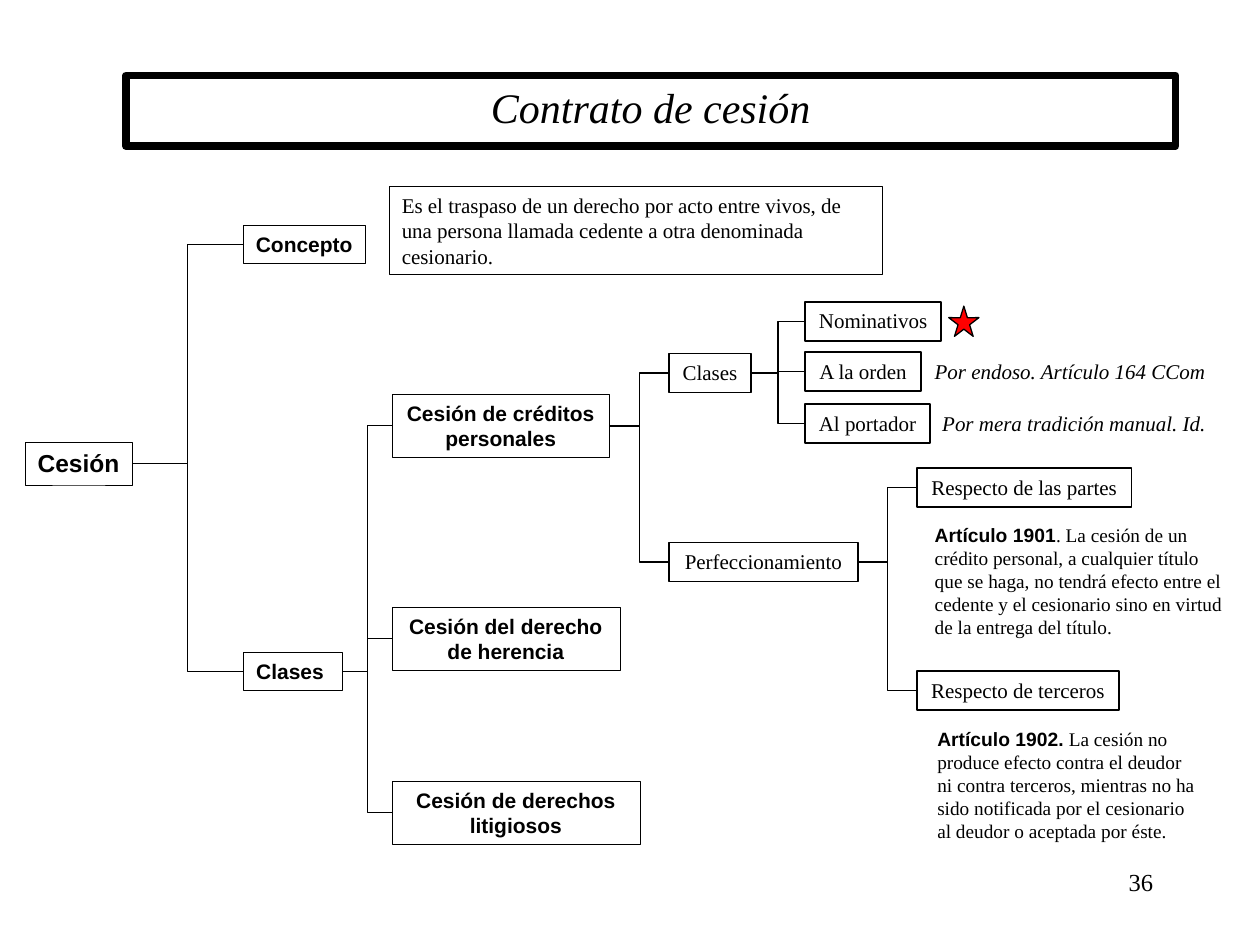
from lxml import etree
from pptx import Presentation
from pptx.dml.color import RGBColor
from pptx.enum.shapes import MSO_CONNECTOR, MSO_SHAPE
from pptx.enum.text import MSO_ANCHOR, MSO_AUTO_SIZE, PP_ALIGN
from pptx.oxml.ns import qn
from pptx.util import Inches, Pt

ELBOW = MSO_CONNECTOR.ELBOW
RECT, STAR = MSO_SHAPE.RECTANGLE, MSO_SHAPE.STAR_5_POINT
LEFT, CENTER, RIGHT = PP_ALIGN.LEFT, PP_ALIGN.CENTER, PP_ALIGN.RIGHT
TOP, MIDDLE = MSO_ANCHOR.TOP, MSO_ANCHOR.MIDDLE
FIT = MSO_AUTO_SIZE.SHAPE_TO_FIT_TEXT
SERIF, SANS = "Times New Roman", "Arial"
BLACK, RED = "000000", "FF0000"
LEFT_SITE, RIGHT_SITE = 1, 3

# Content: left edge of each tree level, in inches
COLUMNS = [0.2, 1.93, 3.11, 5.31, 6.39, 7.28]
TITLE = "Contrato de cesión"
DEFINITION = ("Es el traspaso de un derecho por acto entre vivos, de una persona "
              "llamada cedente a otra denominada cesionario.")

# Box styles
HEADING = dict(font=SANS, bold=True, align=CENTER)
ROOT = dict(font=SANS, bold=True, size=14)
LEAF = dict(align=CENTER)

# key: (text, parent, column, middle y, width, height, wrap, line width, style)
TREE = {
    "root": ("Cesión", None, 0, 3.68, 0.85, 0.34, False, 0.25, ROOT),
    "concept": ("Concepto", "root", 1, 1.94, 0.97, 0.3, False, 0.25, HEADING),
    "kinds": ("Clases ", "root", 1, 5.33, 0.79, 0.3, False, 0.25, HEADING),
    "credits": ("Cesión de créditos personales", "kinds", 2, 3.38, 1.73, 0.5, True, 0.25, HEADING),
    "inheritance": ("Cesión del derecho de herencia", "kinds", 2, 5.07, 1.81, 0.5, True, 0.25, HEADING),
    "litigation": ("Cesión de derechos litigiosos", "kinds", 2, 6.45, 1.97, 0.5, True, 0.25, HEADING),
    "credit kinds": ("Clases", "credits", 3, 2.96, 0.65, 0.31, False, 1, LEAF),
    "perfection": ("Perfeccionamiento", "credits", 3, 4.46, 1.5, 0.31, True, 1, LEAF),
    "registered": ("Nominativos", "credit kinds", 4, 2.55, 1.08, 0.31, False, 1, LEAF),
    "order": ("A la orden", "credit kinds", 4, 2.95, 0.92, 0.31, False, 1, LEAF),
    "bearer": ("Al portador", "credit kinds", 4, 3.36, 0.99, 0.31, False, 1, LEAF),
    "parties": ("Respecto de las partes", "perfection", 5, 3.87, 1.7, 0.31, False, 1, LEAF),
    "third parties": ("Respecto de terceros", "perfection", 5, 5.48, 1.6, 0.31, False, 1, LEAF),
}

# (text, position)
REMARKS = [
    ("Por endoso. Artículo 164 CCom", (7.32, 2.8, 2.36, 0.3)),
    ("Por mera tradición manual. Id.", (7.38, 3.21, 2.3, 0.3)),
]

# (bold lead, text, position)
ARTICLES = [
    ("Artículo 1901", ". La cesión de un crédito personal, a cualquier título que se haga, "
     "no tendrá efecto entre el cedente y el cesionario sino en virtud de la entrega del título.",
     (7.32, 4.1, 2.55, 1.02)),
    ("Artículo 1902.", " La cesión no produce efecto contra el deudor ni contra terceros, "
     "mientras no ha sido notificada por el cesionario al deudor o aceptada por éste.",
     (7.34, 5.72, 2.28, 1.02)),
]


def color(value):
    return RGBColor.from_string(value)


def write(shape, text, lead="", font=SERIF, size=12, bold=False, italic=False,
          align=LEFT, anchor=TOP, wrap=True):
    frame = shape.text_frame
    frame.word_wrap, frame.auto_size, frame.vertical_anchor = wrap, FIT, anchor
    paragraph = frame.paragraphs[0]
    paragraph.alignment = align
    for words, face, heavy in ((lead, SANS, True), (text, font, bold)):
        if words:
            run = paragraph.add_run()
            run.text = words
            run.font.name, run.font.size = face, Pt(size)
            run.font.bold, run.font.italic = heavy, italic
            run.font.color.rgb = color(BLACK)


def outline(slide, kind, position, width, fill=None):
    shape = slide.shapes.add_shape(kind, *map(Inches, position))
    shape.shadow.inherit = False
    if fill:
        shape.fill.solid()
        shape.fill.fore_color.rgb = color(fill)
    else:
        shape.fill.background()
    shape.line.color.rgb = color(BLACK)
    shape.line.width = Pt(width)
    return shape


def label(slide, text, position, **style):
    write(slide.shapes.add_textbox(*map(Inches, position)), text, **style)


def branch(slide, parent, child):
    link = slide.shapes.add_connector(ELBOW, 0, 0, 0, 0)
    link.begin_connect(parent, RIGHT_SITE)
    link.end_connect(child, LEFT_SITE)
    link.line.color.rgb = color(BLACK)
    link.line.width = Pt(0.75)
    etree.SubElement(link._element.spPr, qn("a:effectLst"))


def main():
    deck = Presentation()
    deck.slide_width, deck.slide_height = Inches(10), Inches(7.5)
    slide = deck.slides.add_slide(deck.slide_layouts[6])

    # Title and definition
    write(outline(slide, RECT, (1, 0.6, 8.33, 0.56), 4.5), TITLE,
          size=24, italic=True, align=CENTER)
    write(outline(slide, RECT, (3.09, 1.48, 3.91, 0.7), 0.25), DEFINITION, anchor=MIDDLE)

    # Tree: each box is joined to its parent
    boxes = {}
    for key, (text, parent, column, middle, width, height, wrap, line, style) in TREE.items():
        position = (COLUMNS[column], middle - height / 2, width, height)
        boxes[key] = outline(slide, RECT, position, line)
        write(boxes[key], text, wrap=wrap, **style)
        if parent:
            branch(slide, boxes[parent], boxes[key])

    # Star and remarks beside the leaves
    outline(slide, STAR, (7.53, 2.43, 0.24, 0.24), 0.75, fill=RED)
    for text, position in REMARKS:
        label(slide, text, position, italic=True, wrap=False)
    for lead, text, position in ARTICLES:
        label(slide, text, position, lead=lead, size=11, anchor=MIDDLE)

    # Page number
    label(slide, "36", (7.17, 6.83, 2.08, 0.5), size=14, align=RIGHT)
    deck.save("out.pptx")


if __name__ == "__main__":
    main()
